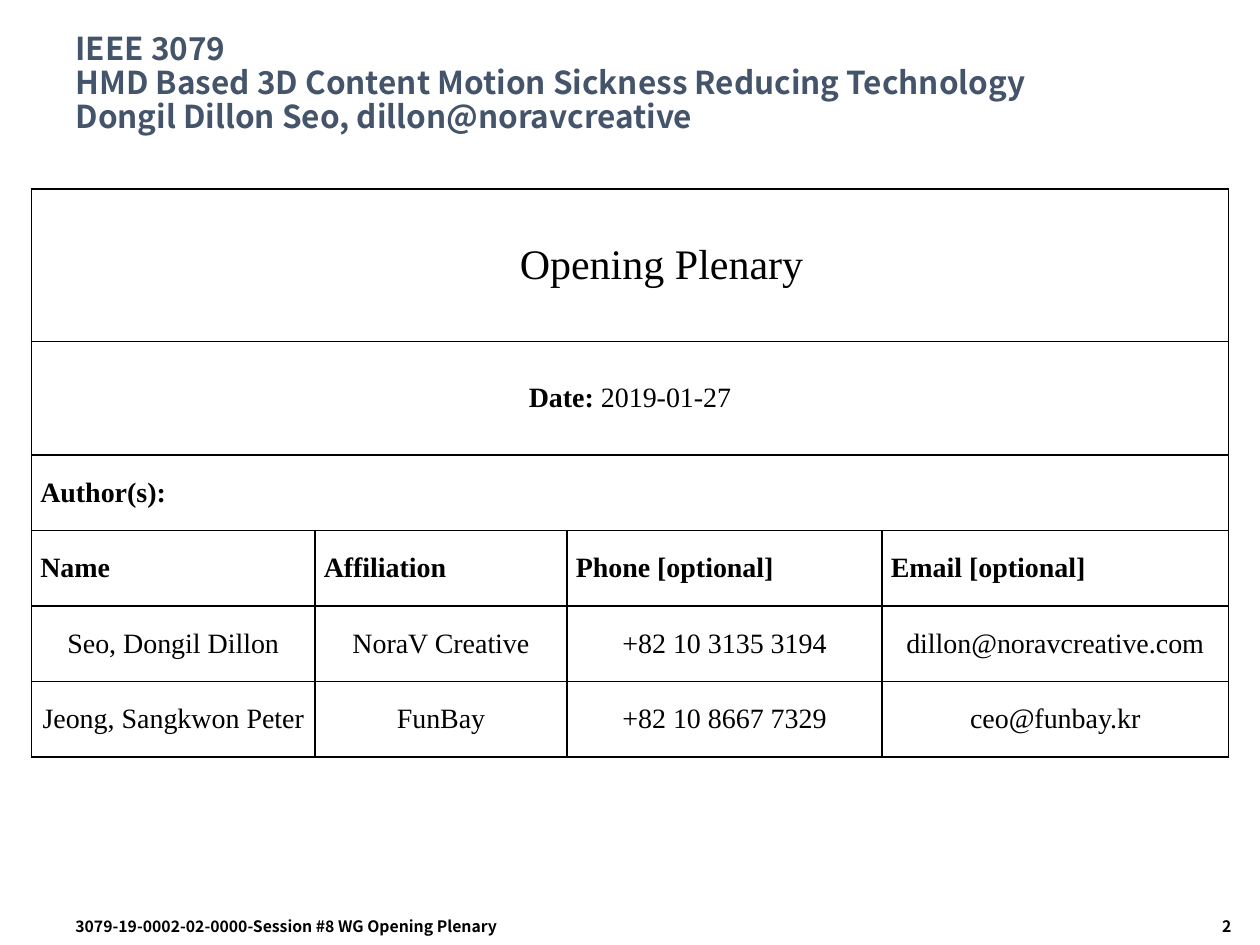
from lxml import etree
from pptx import Presentation
from pptx import util as u
from pptx.dml.color import RGBColor
from pptx.enum import text
from pptx.oxml import ns

PX = 9144  # 100 px to the inch
SANS, SERIF = "Noto Sans CJK KR", "Times New Roman"
LEFT, CENTER, RIGHT = text.PP_ALIGN.LEFT, text.PP_ALIGN.CENTER, text.PP_ALIGN.RIGHT

COLUMNS = [225, 200, 250, 275]
ROWS = [121, 90, 60, 60, 60, 60]
HEADINGS = ["Name", "Affiliation", "Phone [optional]", "Email [optional]"]
AUTHORS = [
    ["Seo, Dongil Dillon", "NoraV Creative", "+82 10 3135 3194", "dillon@noravcreative.com"],
    ["Jeong, Sangkwon Peter", "FunBay", "+82 10 8667 7329", "ceo@funbay.kr"],
]


def px(*lengths):
    return [u.Emu(length * PX) for length in lengths]


def color(hex_value):
    return RGBColor.from_string(hex_value)


def style(paragraph, face, size, hex_value="000000", bold=None, align=LEFT):
    paragraph.alignment = align
    font = paragraph.font
    font.name, font.size, font.bold = face, u.Pt(size), bold
    font.color.rgb = color(hex_value)


def add_title(slide, box):
    title = slide.shapes.title
    title.left, title.top, title.width, title.height = px(*box)
    frame = title.text_frame
    frame.auto_size = text.MSO_AUTO_SIZE.NONE
    frame.vertical_anchor = text.MSO_ANCHOR.MIDDLE
    frame.text = "\v".join([
        "IEEE 3079",
        "HMD Based 3D Content Motion Sickness Reducing Technology",
        "Dongil Dillon Seo, dillon@noravcreative",
    ])
    heading = frame.paragraphs[0]
    heading.line_spacing = 0.9
    style(heading, SANS, 18, "44546A", bold=True)


def add_footer(slide, box, words, align):
    frame = slide.shapes.add_textbox(*px(*box)).text_frame
    frame.word_wrap = True
    frame.text = words
    style(frame.paragraphs[0], SANS, 9, bold=True, align=align)


def format_cell(cell):
    """Clear the fill, tighten the margins and draw all four borders."""
    cell.fill.background()
    cell.vertical_anchor = text.MSO_ANCHOR.MIDDLE
    cell.margin_left, cell.margin_right = px(7, 7)
    cell.margin_top = cell.margin_bottom = 0
    properties = cell._tc.get_or_add_tcPr()
    for position, side in enumerate(["lnL", "lnR", "lnT", "lnB"]):
        border = etree.Element(ns.qn(f"a:{side}"), w=str(u.Pt(1)))
        fill = etree.SubElement(border, ns.qn("a:solidFill"))
        etree.SubElement(fill, ns.qn("a:srgbClr"), val="000000")
        properties.insert(position, border)


def write_cell(cell, words, size=16, bold=False, align=LEFT):
    cell.text = words
    paragraph = cell.text_frame.paragraphs[0]
    style(paragraph, SERIF, size, bold=bold, align=align)
    return paragraph


def add_plenary_table(slide, left, top):
    frame = slide.shapes.add_table(
        len(ROWS), len(COLUMNS), *px(left, top, sum(COLUMNS), sum(ROWS)))
    table = frame.table
    table.first_row = table.horz_banding = False
    for column, width in zip(table.columns, px(*COLUMNS)):
        column.width = width
    for row, height in zip(table.rows, px(*ROWS)):
        row.height = height
    for cell in table.iter_cells():
        format_cell(cell)
    for row in range(3):
        table.cell(row, 0).merge(table.cell(row, len(COLUMNS) - 1))

    session = write_cell(table.cell(0, 0), "Opening Plenary", size=24, align=CENTER)
    properties = session._p.get_or_add_pPr()
    properties.set("marL", str(50 * PX))
    properties.set("indent", "0")
    date = write_cell(table.cell(1, 0), "Date:", align=CENTER)
    date.runs[0].font.bold = True
    date.add_run().text = " 2019-01-27"
    for paragraph in (session, date):
        paragraph.space_after = u.Pt(12)

    write_cell(table.cell(2, 0), "Author(s):", bold=True)
    for column, heading in enumerate(HEADINGS):
        write_cell(table.cell(3, column), heading, bold=True)
    for row, author in enumerate(AUTHORS, start=4):
        for column, detail in enumerate(author):
            write_cell(table.cell(row, column), detail, align=CENTER)


def main():
    deck = Presentation()
    deck.slide_width, deck.slide_height = px(1000, 750)
    slide = deck.slides.add_slide(deck.slide_layouts[5])
    add_plenary_table(slide, 25, 150)
    add_title(slide, (50, 17, 900, 100))
    add_footer(slide, (50, 723, 442, 27),
               "3079-19-0002-02-0000-Session #8 WG Opening Plenary", LEFT)
    add_footer(slide, (825, 723, 162, 27), "2", RIGHT)
    deck.save("out.pptx")


if __name__ == "__main__":
    main()
